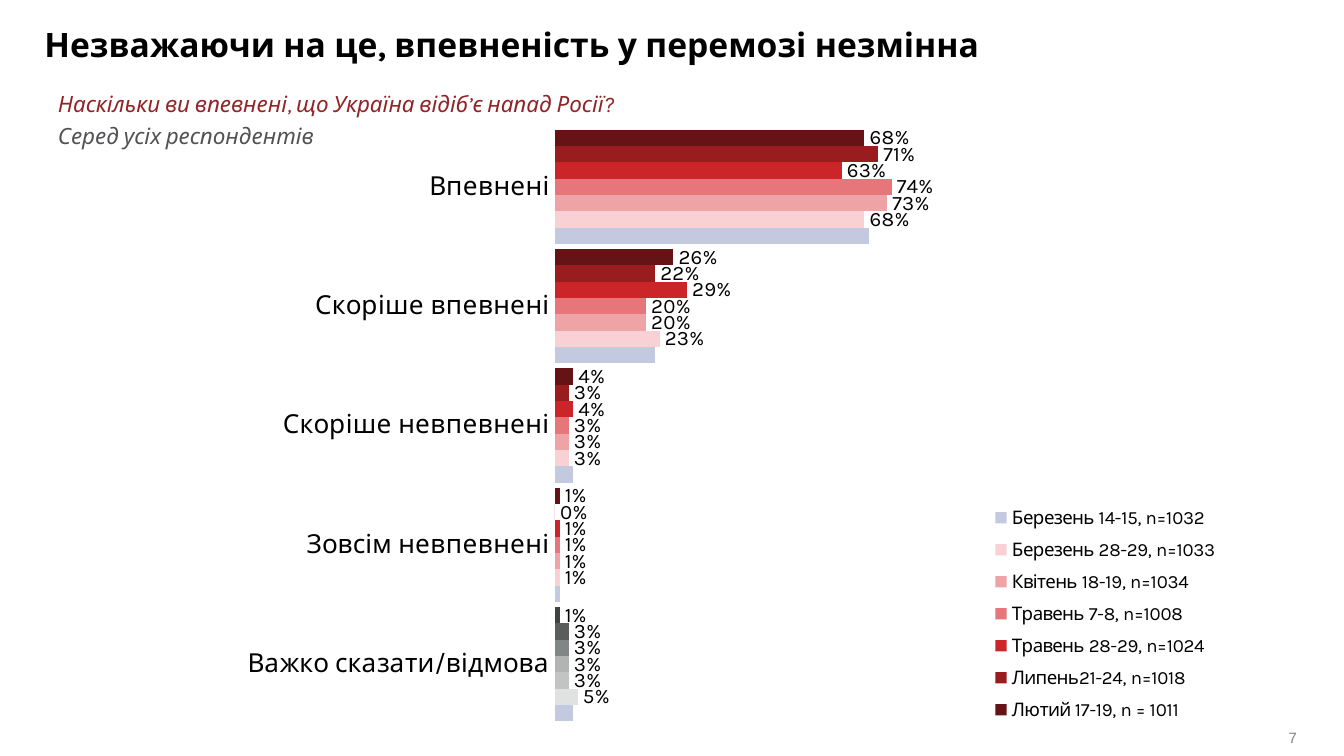
from lxml.etree import SubElement
from pptx import Presentation
from pptx.chart.data import CategoryChartData
from pptx.dml.color import RGBColor
from pptx.enum.chart import (XL_CHART_TYPE as ChartType, XL_LABEL_POSITION as LabelPos,
                             XL_LEGEND_POSITION as LegendPos, XL_TICK_MARK as TickMark)
from pptx.enum.text import MSO_ANCHOR as Anchor, PP_ALIGN as Align
from pptx.oxml.ns import qn
from pptx.util import Pt

COLORS = {"black": "000000", "white": "FFFFFF", "question": "922428",
          "base": "535154", "number": "808585"}
TITLE = "Незважаючи на це, впевненість у перемозі незмінна"
QUESTION = "Наскільки ви впевнені, що Україна відіб’є напад Росії?"
BASE = "Серед усіх респондентів"
PAGE_NUMBER = "7"
ANSWERS = ["Впевнені", "Скоріше впевнені", "Скоріше невпевнені",
           "Зовсім невпевнені", "Важко сказати/відмова"]
WAVES = [
    ("Лютий 17-19, n = 1011", (0.68, 0.26, 0.04, 0.01, 0.01), "651314", "404343"),
    ("Липень21-24, n=1018", (0.71, 0.22, 0.03, 0, 0.03), "991C1F", "595D5C"),
    ("Травень 28-29, n=1024", (0.63, 0.29, 0.04, 0.01, 0.03), "CC2529", "808585"),
    ("Травень 7-8, n=1008", (0.74, 0.2, 0.03, 0.01, 0.03), "E6767A", "B2B4B4"),
    ("Квітень 18-19, n=1034", (0.73, 0.2, 0.03, 0.01, 0.03), "EEA4A6", "C2C4C4"),
    ("Березень 28-29, n=1033", (0.68, 0.23, 0.03, 0.01, 0.05), "F9D1D4", "E0E2E1"),
    ("Березень 14-15, n=1032", (0.69, 0.22, 0.04, 0.01, 0.04), "C3C9DE", None),
]
CHART_LEFT, CHART_TOP, CHART_WIDTH, CHART_HEIGHT = -25.8, 60.5, 708.5, 335
PLOT_AREA = {"x": 323.1, "y": 7.7, "w": 243.8, "h": 319.6}
LEGEND_AREA = {"x": 554.2, "y": 205.4, "w": 127.5, "h": 126}


def style_font(font, size, color="black", name="Karla"):
    font.name, font.size = name, Pt(size)
    font.color.rgb = RGBColor.from_string(COLORS[color])


def write(shape, text, size, color, name="Karla", bold=False, italic=False,
          align=Align.LEFT, anchor=Anchor.TOP):
    frame = shape.text_frame
    frame.word_wrap = True
    frame.vertical_anchor = anchor
    frame.margin_left = frame.margin_right = frame.margin_top = frame.margin_bottom = 0
    paragraph = frame.paragraphs[0]
    paragraph.alignment = align
    run = paragraph.add_run()
    run.text = text
    style_font(run.font, size, color, name)
    run.font.bold, run.font.italic = bold, italic


def place(element, index, area, inner=False):
    for old in element.findall(qn("c:layout")):
        element.remove(old)
    layout = element.makeelement(qn("c:layout"))
    element.insert(index, layout)
    manual = SubElement(layout, qn("c:manualLayout"))
    if inner:
        SubElement(manual, qn("c:layoutTarget"), val="inner")
    for side in "xy":
        SubElement(manual, qn(f"c:{side}Mode"), val="edge")
    for side, length in area.items():
        whole = CHART_WIDTH if side in "xw" else CHART_HEIGHT
        SubElement(manual, qn(f"c:{side}"), val=str(length / whole))


deck = Presentation()
deck.slide_width, deck.slide_height = Pt(720), Pt(405)
slide = deck.slides.add_slide(deck.slide_layouts[5])

number = slide.shapes.add_textbox(Pt(592.5), Pt(389.5), Pt(102.25), Pt(11.5))
number.fill.solid()
number.fill.fore_color.rgb = RGBColor.from_string(COLORS["white"])
write(number, PAGE_NUMBER, 8, "number", name="Arial", align=Align.RIGHT, anchor=Anchor.MIDDLE)

data = CategoryChartData(number_format="0%")
data.categories = ANSWERS
for name, shares, _, _ in WAVES:
    data.add_series(name, shares)
chart = slide.shapes.add_chart(ChartType.BAR_CLUSTERED, Pt(CHART_LEFT), Pt(CHART_TOP),
                               Pt(CHART_WIDTH), Pt(CHART_HEIGHT), data).chart
chart.has_title = False
style_font(chart.font, 11, name="Arial")

answer_axis = chart.category_axis
answer_axis.reverse_order = True
answer_axis.major_tick_mark = answer_axis.minor_tick_mark = TickMark.NONE
answer_axis.format.line.fill.background()
style_font(answer_axis.tick_labels.font, 14)
share_axis = chart.value_axis
share_axis.minimum_scale, share_axis.maximum_scale = 0, 1
share_axis.has_major_gridlines = False
share_axis.visible = False

bars = chart.plots[0]
bars.gap_width = 30
bars.vary_by_categories = False
for series, (_, _, color, unsure_color) in zip(bars.series, WAVES):
    series.invert_if_negative = False
    series.format.fill.solid()
    series.format.fill.fore_color.rgb = RGBColor.from_string(color)
    if unsure_color:
        unsure_fill = series.points[len(ANSWERS) - 1].format.fill
        unsure_fill.solid()
        unsure_fill.fore_color.rgb = RGBColor.from_string(unsure_color)
        labels = series.data_labels
        labels.show_value = True
        labels.position = LabelPos.OUTSIDE_END
        labels.number_format, labels.number_format_is_linked = "0%", False
        style_font(labels.font, 11)

chart.has_legend = True
legend = chart.legend
legend.position = LegendPos.RIGHT
legend.include_in_layout = False
style_font(legend.font, 10)
place(bars._element.getparent(), 0, PLOT_AREA, inner=True)
place(legend._element, 1, LEGEND_AREA)

title = slide.shapes.title
title.left, title.top, title.width, title.height = Pt(23.75), Pt(13), Pt(638.5), Pt(21.5)
write(title, TITLE, 18, "black", bold=True)
question = slide.shapes.add_textbox(Pt(31), Pt(48.4), Pt(600), Pt(14.5))
write(question, QUESTION, 12, "question", italic=True)
base = slide.shapes.add_textbox(Pt(31), Pt(65.5), Pt(184), Pt(14.5))
write(base, BASE, 12, "base", italic=True)

deck.save("out.pptx")
